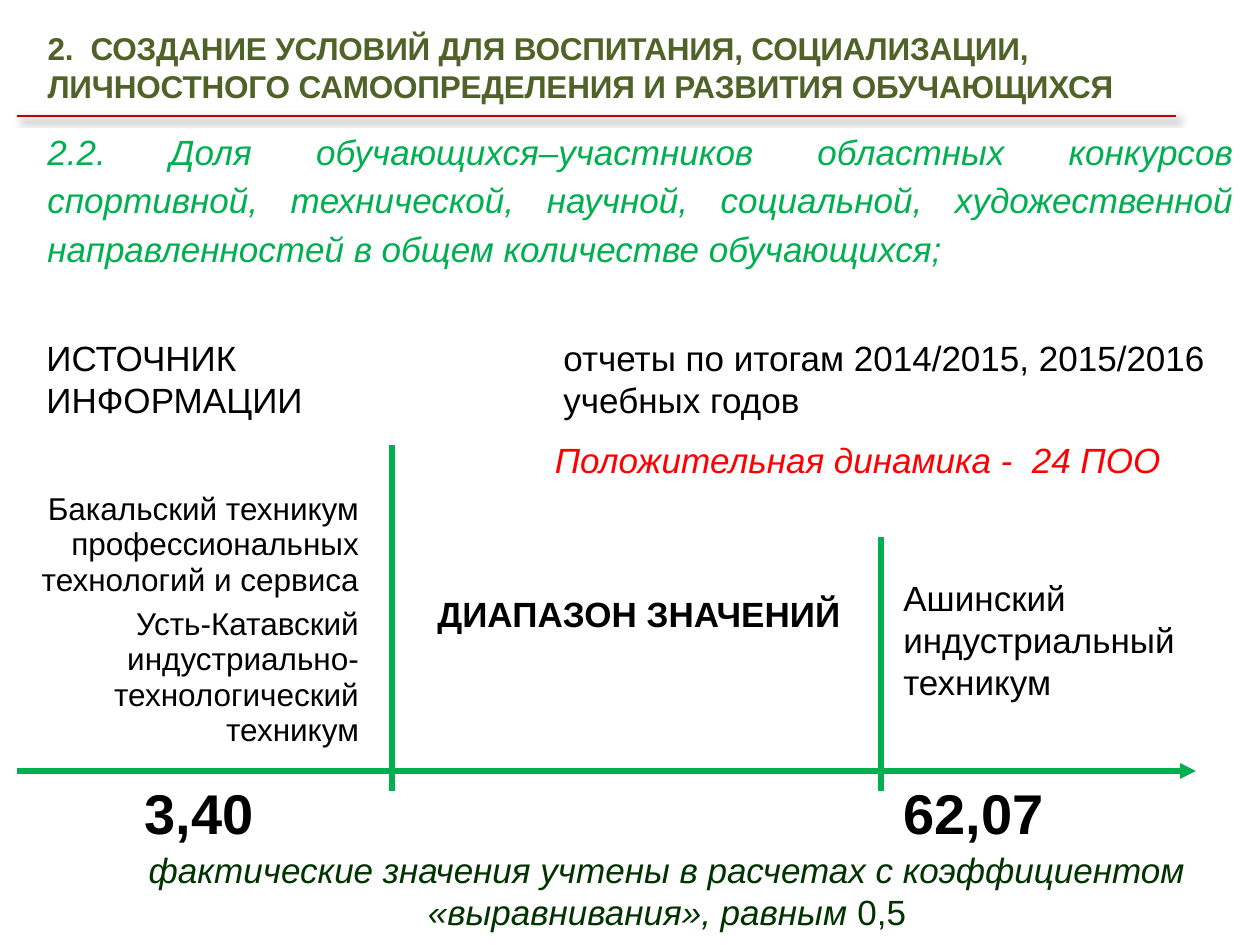
from lxml import etree
from pptx import Presentation, util as u
from pptx.dml.color import RGBColor
from pptx.enum import shapes, text
from pptx.oxml import ns

PX = 914400 / 126
FONT = "Arial"
BLACK, GREEN, RED = "000000", "00B050", "FF0000"
LEFT, CENTER = text.PP_ALIGN.LEFT, text.PP_ALIGN.CENTER
RIGHT, JUSTIFY = text.PP_ALIGN.RIGHT, text.PP_ALIGN.JUSTIFY


def px(n):
    return u.Emu(round(n * PX))


def rgb(color):
    return RGBColor.from_string(color)


def add_xml(parent, tag, **attrs):
    child = etree.SubElement(parent, ns.qn(tag))
    for name, value in attrs.items():
        child.set(name, str(value))
    return child


def format_runs(p, size, color, bold=False, italic=False, align=LEFT):
    p.alignment = align
    for r in p.runs:
        r.font.name, r.font.size = FONT, u.Pt(size)
        r.font.bold, r.font.italic = bold, italic
        r.font.color.rgb = rgb(color)


def set_text(sp, words, size=20, color=BLACK, **style):
    tf = sp.text_frame
    tf.text = words
    tf.word_wrap = True
    format_runs(tf.paragraphs[0], size, color, **style)
    return tf.paragraphs[0]


def add_text(s, box, words, **style):
    return set_text(s.shapes.add_textbox(*map(px, box)), words, **style)


def add_title(s, box, words):
    sp = s.shapes.title
    sp.left, sp.top, sp.width, sp.height = map(px, box)
    sp.text_frame.vertical_anchor = text.MSO_ANCHOR.TOP
    p = set_text(sp, words, size=18, color="4F6228", bold=True)
    sp.text_frame.auto_size = text.MSO_AUTO_SIZE.NONE
    p.runs[0].font._element.set("spc", "-10")


def add_line(s, x1, y1, x2, y2, color=GREEN, width=3, arrow=False, shadow=False):
    ends = map(px, (x1, y1, x2, y2))
    line = s.shapes.add_connector(shapes.MSO_CONNECTOR.STRAIGHT, *ends)
    line.line.color.rgb = rgb(color)
    line.line.width = u.Pt(width)
    if arrow:
        add_xml(line.line._get_or_add_ln(), "a:tailEnd", type="triangle")
    effects = add_xml(line._element.spPr, "a:effectLst")
    if shadow:
        outer = add_xml(effects, "a:outerShdw", blurRad=u.Pt(4), dist=u.Pt(3),
                        dir=45 * 60000, algn="tl", rotWithShape=0)
        black = add_xml(outer, "a:srgbClr", val=BLACK)
        add_xml(black, "a:alpha", val=40000)


def add_callout(s, box, words):
    sp = s.shapes.add_shape(shapes.MSO_SHAPE.RECTANGLE, *map(px, box))
    sp.shadow.inherit = False
    sp.fill.solid()
    sp.fill.fore_color.rgb = rgb("FFFFFF")
    sp.line.fill.background()
    set_text(sp, words, color=RED, italic=True, align=CENTER)


def add_college_table(s, left, top, width, rows):
    """One plain column; rows holds (height, name) pairs."""
    heights = [height for height, _ in rows]
    frame = s.shapes.add_table(len(rows), 1, px(left), px(top), px(width),
                               px(sum(heights)))
    table = frame.table
    table.first_row = table.horz_banding = False
    for i, (height, name) in enumerate(rows):
        table.rows[i].height = px(height)
        cell = table.cell(i, 0)
        cell.fill.background()
        cell.margin_left = cell.margin_right = cell.margin_top = px(1)
        cell.margin_bottom = 0
        cell.text = name
        format_runs(cell.text_frame.paragraphs[0], 18, BLACK, align=RIGHT)


def main():
    prs = Presentation()
    prs.slide_width, prs.slide_height = px(1260), px(945)
    s = prs.slides.add_slide(prs.slide_layouts[5])

    add_line(s, 17, 116, 1176, 116, "C00000", 1.5, shadow=True)
    add_title(s, (35, 23, 1131, 89),
              "2.  СОЗДАНИЕ УСЛОВИЙ ДЛЯ ВОСПИТАНИЯ, СОЦИАЛИЗАЦИИ, "
              "ЛИЧНОСТНОГО САМООПРЕДЕЛЕНИЯ И РАЗВИТИЯ ОБУЧАЮЩИХСЯ")
    indicator = add_text(
        s, (35, 118, 1211, 162),
        "2.2. Доля обучающихся–участников областных конкурсов спортивной, "
        "технической, научной, социальной, художественной направленностей "
        "в общем количестве обучающихся;",
        color=GREEN, italic=True, align=JUSTIFY)
    indicator.line_spacing = 1.15

    add_text(s, (34, 330, 314, 97), "ИСТОЧНИК ИНФОРМАЦИИ")
    add_text(s, (551, 330, 674, 97),
             "отчеты по итогам 2014/2015, 2015/2016 учебных годов")
    add_callout(s, (456, 432, 804, 55), "Положительная динамика -  24 ПОО")

    add_college_table(s, -24, 491, 384, [
        (115, "Бакальский техникум профессиональных технологий и сервиса"),
        (152, "Усть-Катавский индустриально-технологический техникум"),
    ])
    add_text(s, (425, 586, 784, 55), "ДИАПАЗОН ЗНАЧЕНИЙ", bold=True)
    add_text(s, (891, 570, 305, 140), "Ашинский индустриальный техникум")

    for x, top in ((392, 445), (881, 537)):
        add_line(s, x, top, x, 791)
    add_line(s, 17, 771, 1196, 771, arrow=True)
    for x, width, value in ((132, 145, "3,40"), (891, 176, "62,07")):
        add_text(s, (x, 772, width, 81), value, size=32, bold=True)

    note = add_text(s, (88, 842, 1158, 97),
                    "фактические значения учтены в расчетах с коэффициентом "
                    "«выравнивания», равным ")
    note.add_run().text = "0,5"
    format_runs(note, 20, "003300", italic=True, align=CENTER)
    note.runs[-1].font.italic = False

    prs.save("out.pptx")


if __name__ == "__main__":
    main()
